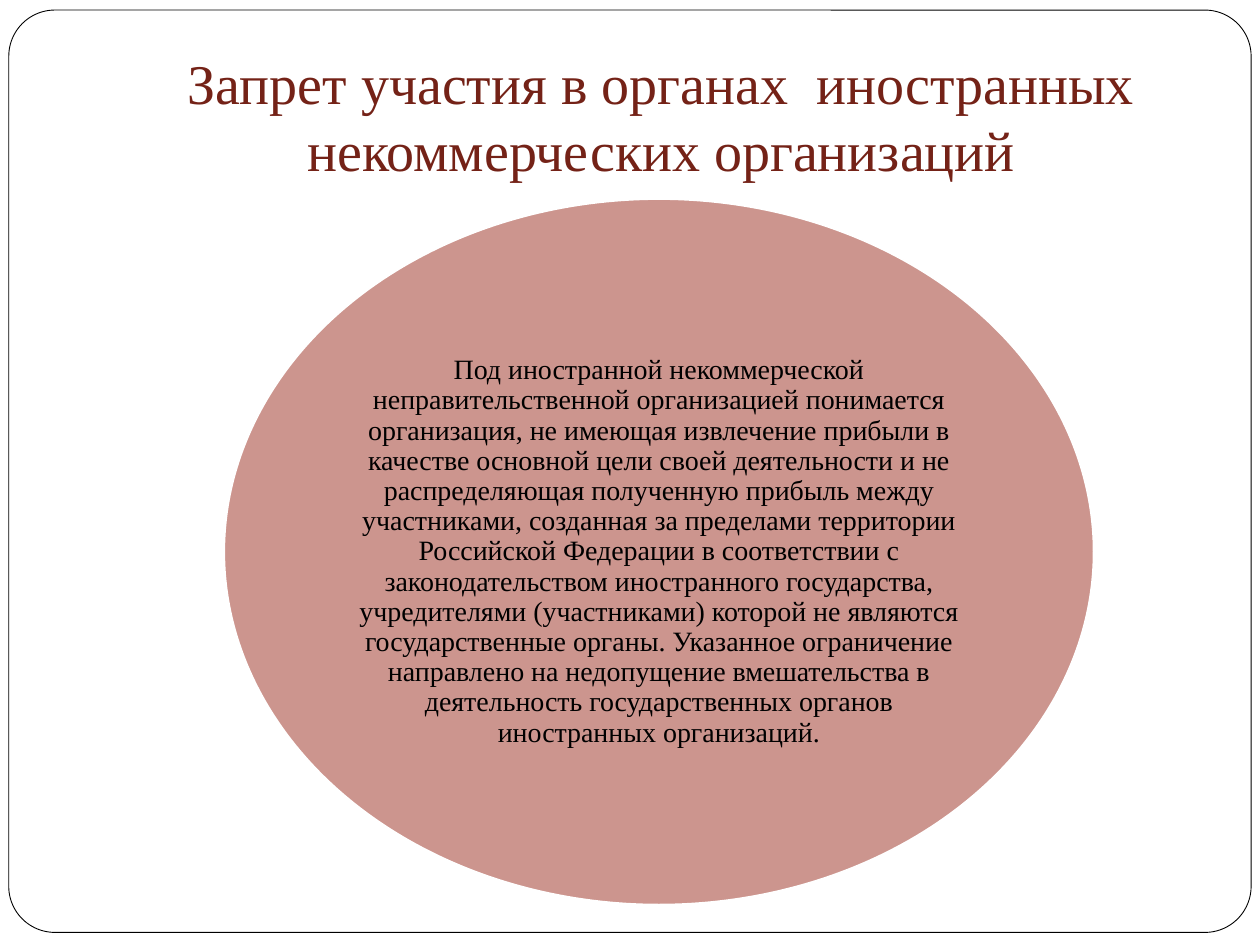
from dataclasses import dataclass

from lxml import etree
from pptx import Presentation
from pptx.dml.color import RGBColor
from pptx.enum.shapes import MSO_SHAPE
from pptx.enum.text import MSO_ANCHOR, PP_ALIGN
from pptx.oxml.ns import qn
from pptx.util import Inches, Pt

ROUND_RECT, OVAL = MSO_SHAPE.ROUNDED_RECTANGLE, MSO_SHAPE.OVAL
MIDDLE, BOTTOM = MSO_ANCHOR.MIDDLE, MSO_ANCHOR.BOTTOM
CENTER = PP_ALIGN.CENTER


@dataclass(frozen=True)
class Theme:
    font: str = "Times New Roman"
    title_size: int = 32
    body_size: int = 16
    paper: str = "FFFFFF"
    ink: str = "000000"
    title: str = "742217"
    accent: str = "9B2D1F"
    accent_opacity: int = 50


THEME = Theme()

TITLE = "Запрет участия в органах  иностранных некоммерческих организаций"
DEFINITION = (
    "Под иностранной некоммерческой неправительственной организацией понимается "
    "организация, не имеющая извлечение прибыли в качестве основной цели своей "
    "деятельности и не распределяющая полученную прибыль между участниками, "
    "созданная за пределами территории Российской Федерации в соответствии с "
    "законодательством иностранного государства, учредителями (участниками) "
    "которой не являются государственные органы. Указанное ограничение направлено "
    "на недопущение вмешательства в деятельность государственных органов "
    "иностранных организаций."
)


def inches(values):
    return [Inches(v) for v in values]


def add_outline(slide, kind, box, fill, line, width):
    sp = slide.shapes.add_shape(kind, *inches(box))
    sp.shadow.inherit = False
    sp.fill.solid()
    sp.fill.fore_color.rgb = RGBColor.from_string(fill)
    sp.line.color.rgb = RGBColor.from_string(line)
    sp.line.width = Pt(width)
    return sp


def add_text(slide, box, text, size, color, anchor, insets):
    tf = slide.shapes.add_textbox(*inches(box)).text_frame
    tf.word_wrap = True
    tf.vertical_anchor = anchor
    tf.margin_left, tf.margin_top, tf.margin_right, tf.margin_bottom = inches(insets)
    p = tf.paragraphs[0]
    p.text = text
    p.alignment = CENTER
    p.font.name = THEME.font
    p.font.size = Pt(size)
    p.font.color.rgb = RGBColor.from_string(color)
    return p


def add_frame(slide, box):
    sp = add_outline(slide, ROUND_RECT, box, THEME.paper, THEME.ink, 0.5)
    sp.adjustments[0] = 0.05


def add_title(slide, box):
    add_text(slide, box, TITLE, THEME.title_size, THEME.title, BOTTOM,
             (0.1, 0.05, 0.1, 0.1))


def add_definition(slide, box):
    # Translucent ellipse
    sp = add_outline(slide, OVAL, box, THEME.accent, THEME.paper, 1)
    color = sp.fill._xPr.find(qn("a:solidFill"))[0]
    etree.SubElement(color, qn("a:alpha"), val=str(THEME.accent_opacity * 1000))

    # Text in the rectangle inscribed in the ellipse
    left, top, width, height = box
    w, h = width * 0.5 ** 0.5, height * 0.5 ** 0.5
    inner = (left + (width - w) / 2, top + (height - h) / 2, w, h)
    p = add_text(slide, inner, DEFINITION, THEME.body_size, THEME.ink, MIDDLE,
                 (0, 0, 0, 0))
    p.line_spacing = 0.9


def main():
    prs = Presentation()
    prs.slide_width, prs.slide_height = Inches(10), Inches(7.5)
    slide = prs.slides.add_slide(prs.slide_layouts[6])
    add_frame(slide, (0.07, 0.08, 9.86, 7.32))
    add_title(slide, (1, 0.3, 8.5, 1.25))
    add_definition(slide, (1.78, 1.58, 6.9, 5.6))
    prs.save("out.pptx")


if __name__ == "__main__":
    main()
